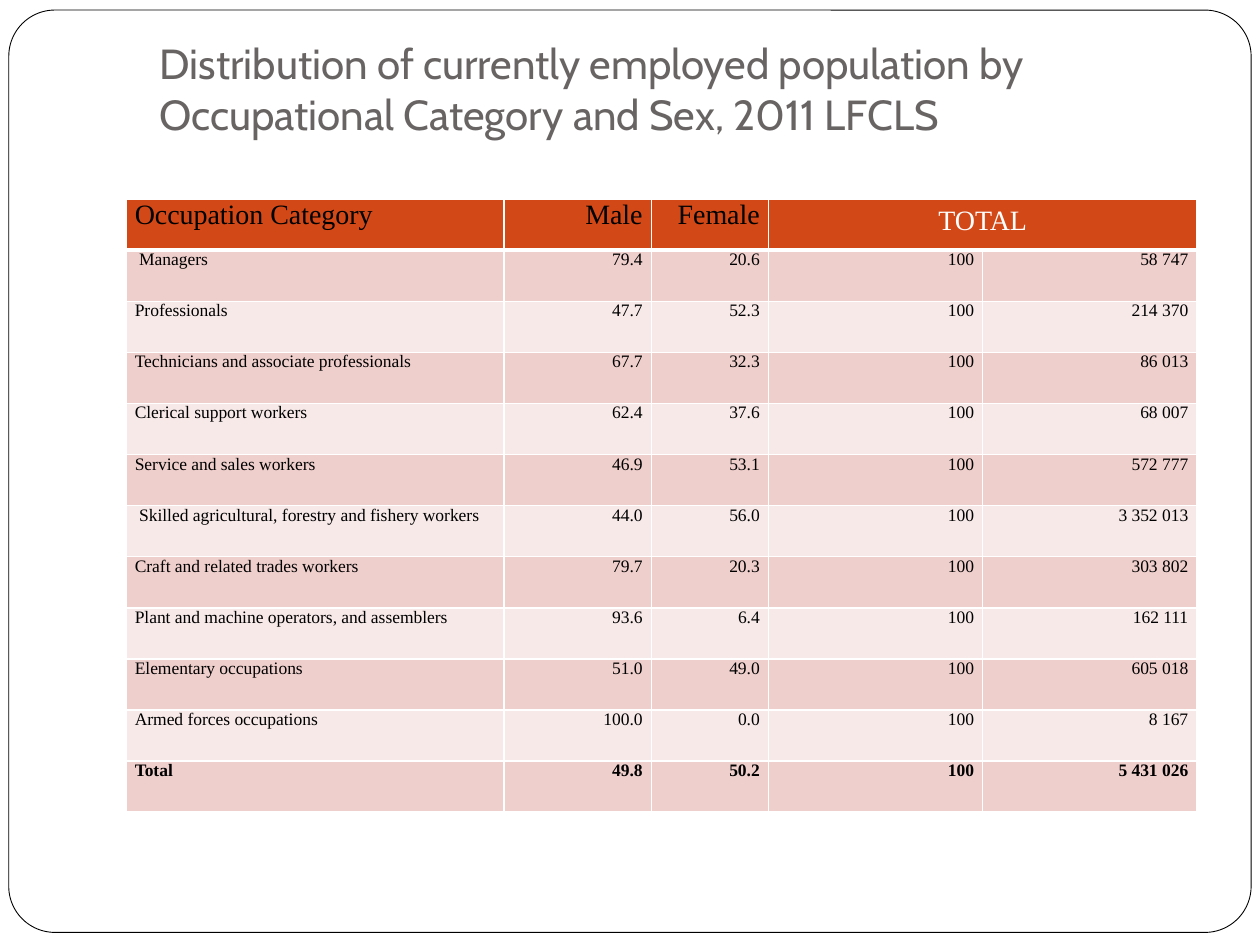
from lxml import etree
from pptx import Presentation, util as u
from pptx.dml.color import RGBColor
from pptx.enum import shapes, text
from pptx.oxml.ns import qn

WHITE, BLACK, GREY = "FFFFFF", "000000", "696464"
HEADER_FILL, BANDS = "D34817", ("EFCFCC", "F7E9E8")
LEFT, CENTER, RIGHT = text.PP_ALIGN.LEFT, text.PP_ALIGN.CENTER, text.PP_ALIGN.RIGHT


def write(frame, words, size, font="Times New Roman", color=BLACK, bold=False, align=LEFT):
    paragraph = frame.paragraphs[0]
    paragraph.alignment = align
    run = paragraph.add_run()
    run.text = words
    run.font.size = u.Pt(size)
    run.font.name = font
    run.font.bold = bold
    run.font.color.rgb = RGBColor.from_string(color)


def style_cell(cell, fill, top=1, bottom=1):
    """Draw white borders (widths in points), then fill the cell."""
    properties = cell._tc.get_or_add_tcPr()
    for side, width in (("L", 1), ("R", 1), ("T", top), ("B", bottom)):
        line = etree.SubElement(properties, qn(f"a:ln{side}"), w=str(u.Pt(width)))
        solid = etree.SubElement(line, qn("a:solidFill"))
        etree.SubElement(solid, qn("a:srgbClr"), val=WHITE)
    cell.fill.solid()
    cell.fill.fore_color.rgb = RGBColor.from_string(fill)


deck = Presentation()
deck.slide_width, deck.slide_height = u.Inches(10), u.Inches(7.5)
slide = deck.slides.add_slide(deck.slide_layouts[6])

border = slide.shapes.add_shape(
    shapes.MSO_SHAPE.ROUNDED_RECTANGLE,
    u.Inches(0.07), u.Inches(0.08), u.Inches(9.86), u.Inches(7.32))
border.adjustments[0] = 0.05
border.shadow.inherit = False
border.fill.solid()
border.fill.fore_color.rgb = RGBColor.from_string(WHITE)
border.line.color.rgb = RGBColor.from_string(BLACK)
border.line.width = u.Pt(0.5)

title = slide.shapes.add_textbox(
    u.Inches(1.17), u.Inches(0.33), u.Inches(8.5), u.Inches(0.87)).text_frame
title.word_wrap = True
title.vertical_anchor = text.MSO_ANCHOR.BOTTOM
title.margin_bottom = u.Inches(0.1)
write(title, "Distribution of currently employed population by "
      "Occupational Category and Sex, 2011 LFCLS", 24, font="Cabin", color=GREY)

headings = ("Occupation Category", "Male", "Female", "TOTAL")
occupations = (
    (" Managers", "79.4", "20.6", "58 747"),
    ("Professionals", "47.7", "52.3", "214 370"),
    ("Technicians and associate professionals", "67.7", "32.3", "86 013"),
    ("Clerical support workers", "62.4", "37.6", "68 007"),
    ("Service and sales workers", "46.9", "53.1", "572 777"),
    (" Skilled agricultural, forestry and fishery workers", "44.0", "56.0", "3 352 013"),
    ("Craft and related trades workers", "79.7", "20.3", "303 802"),
    ("Plant and machine operators, and assemblers", "93.6", "6.4", "162 111"),
    ("Elementary occupations", "51.0", "49.0", "605 018"),
    ("Armed forces occupations", "100.0", "0.0", "8 167"),
    ("Total", "49.8", "50.2", "5 431 026"),
)
rows = [headings] + [(name, male, female, "100", count)
                     for name, male, female, count in occupations]
widths = (3, 1.17, 0.93, 1.7, 1.7)

table = slide.shapes.add_table(
    len(rows), len(widths), u.Inches(1), u.Inches(1.58),
    u.Inches(8.5), u.Inches(4.87)).table
for column, width in zip(table.columns, widths):
    column.width = u.Inches(width)
table.cell(0, 3).merge(table.cell(0, 4))

for r, row in enumerate(rows):
    is_header = r == 0
    fill = HEADER_FILL if is_header else BANDS[(r - 1) % 2]
    for c in range(len(widths)):
        cell = table.cell(r, c)
        style_cell(cell, fill, top=3 if r == 1 else 1, bottom=3 if is_header else 1)
        if cell.is_spanned:
            continue
        if cell.is_merge_origin:
            write(cell.text_frame, row[c], 16, color=WHITE, align=CENTER)
            continue
        cell.margin_left = cell.margin_right = u.Inches(0.07)
        cell.margin_top = cell.margin_bottom = 0
        write(cell.text_frame, row[c], 16 if is_header else 10,
              bold=r == len(rows) - 1, align=RIGHT if c else LEFT)

deck.save("out.pptx")
